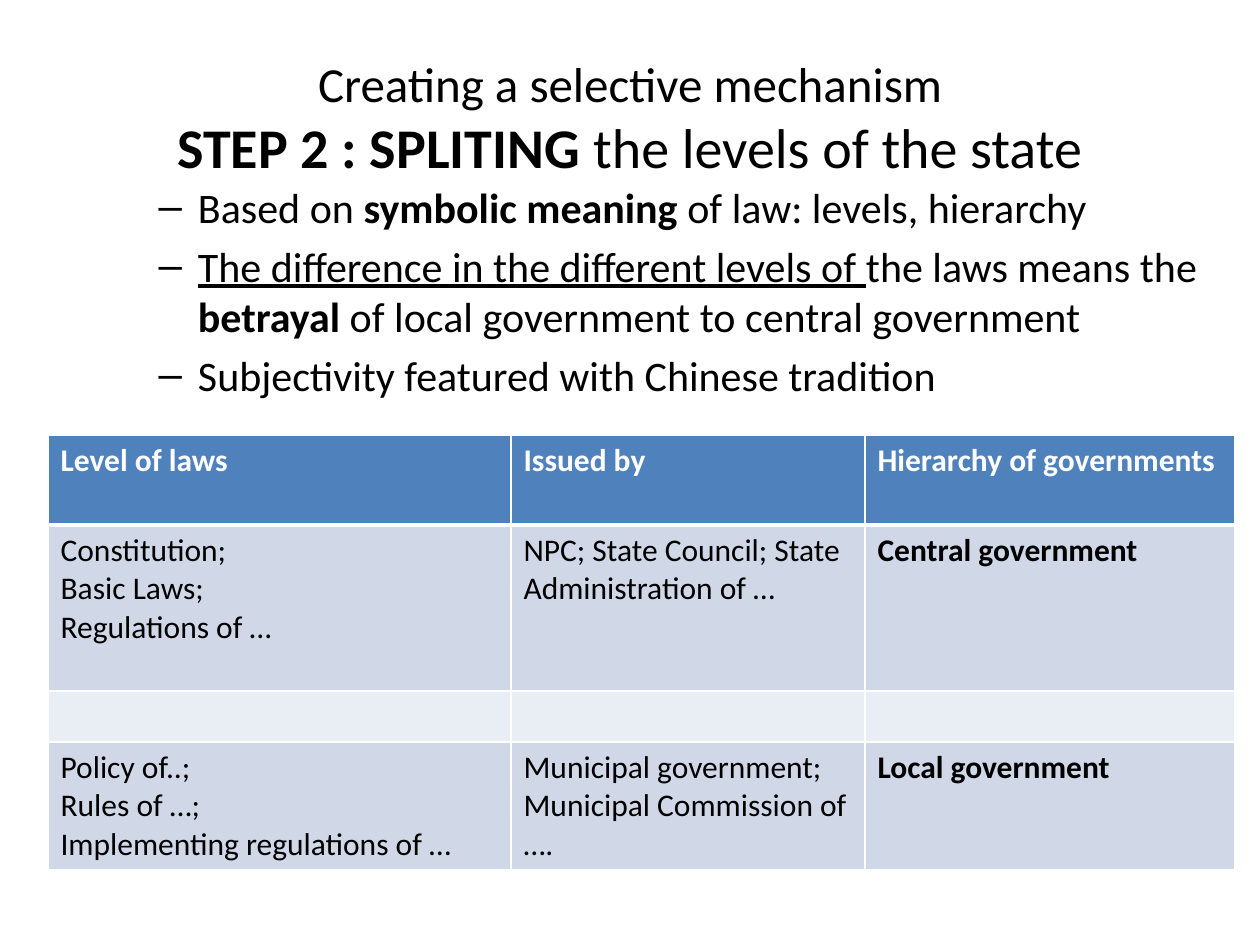
"""Build a slide on splitting the levels of the state, with a table of law levels."""
from lxml import etree
from pptx import Presentation
from pptx.dml.color import RGBColor
from pptx.enum.text import MSO_ANCHOR, PP_ALIGN
from pptx.oxml.ns import qn
from pptx.util import Pt

CENTER, MIDDLE, TOP = PP_ALIGN.CENTER, MSO_ANCHOR.MIDDLE, MSO_ANCHOR.TOP
PX = 914400 // 126
FONT = "Calibri"
BLACK = RGBColor(0x00, 0x00, 0x00)
WHITE = RGBColor(0xFF, 0xFF, 0xFF)
BLUE = RGBColor(0x4F, 0x81, 0xBD)
BAND_DARK = RGBColor(0xD0, 0xD8, 0xE8)
BAND_LIGHT = RGBColor(0xE9, 0xED, 0xF4)

TITLE = [
    [("Creating a selective mechanism", 28, False)],
    [("STEP 2 : SPLITING ", 32, True), ("the levels of the state", 32, False)],
]
BULLETS = [
    [("Based on ", ""), ("symbolic meaning ", "b"), ("of law: levels, hierarchy", "")],
    [("The difference in the different levels of ", "u"), ("the laws means the ", ""),
     ("betrayal ", "b"), ("of local government to central government", "")],
    [("Subjectivity featured with Chinese tradition", "")],
]
ROWS = [
    ["Level of laws", "Issued by", "Hierarchy of governments"],
    ["Constitution;\nBasic Laws;\nRegulations of …",
     "NPC; State Council; State Administration of …", "Central government"],
    ["", "", ""],
    ["Policy of..;\nRules of …;\nImplementing regulations of …",
     "Municipal government;\nMunicipal Commission of ….", "Local government"],
]
COL_WIDTHS = [463, 354, 370]
ROW_HEIGHTS = [90, 166, 51, 128]


def place(shape, *box):
    shape.left, shape.top, shape.width, shape.height = (v * PX for v in box)


def style(p, size, color, bold=None):
    p.font.name = FONT
    p.font.size = Pt(size)
    p.font.color.rgb = color
    p.font.bold = bold


def add_border(cell, side, points):
    ln = etree.SubElement(cell._tc.get_or_add_tcPr(), qn(f"a:ln{side}"), w=str(Pt(points)))
    fill = etree.SubElement(ln, qn("a:solidFill"))
    etree.SubElement(fill, qn("a:srgbClr"), val=str(WHITE))


def add_title(s):
    title = s.shapes.title
    place(title, 63, 38, 1134, 157)
    tf = title.text_frame
    tf.vertical_anchor = MIDDLE
    p = tf.paragraphs[0]
    p.alignment = CENTER
    for i, line in enumerate(TITLE):
        if i:
            p.add_line_break()
        for text, size, bold in line:
            r = p.add_run()
            r.text = text
            r.font.size = Pt(size)
            r.font.bold = bold
    p.font.name = FONT
    p.font.color.rgb = BLACK


def add_bullets(s):
    body = s.placeholders[1]
    place(body, 83, 175, 1134, 624)
    tf = body.text_frame
    tf.vertical_anchor = TOP
    for i, runs in enumerate(BULLETS):
        p = tf.add_paragraph() if i else tf.paragraphs[0]
        p.level = 1
        if not i:
            p.space_before = Pt(0)
        for text, mark in runs:
            r = p.add_run()
            r.text = text
            r.font.bold = mark == "b"
            r.font.underline = mark == "u"
        style(p, 24, BLACK)


def add_law_table(s):
    frame = s.shapes.add_table(len(ROWS), len(COL_WIDTHS), 48 * PX, 435 * PX,
                               sum(COL_WIDTHS) * PX, sum(ROW_HEIGHTS) * PX)
    table = frame.table
    for col, width in zip(table.columns, COL_WIDTHS):
        col.width = width * PX
    for i, (texts, height) in enumerate(zip(ROWS, ROW_HEIGHTS)):
        table.rows[i].height = height * PX
        header = i == 0
        for j, text in enumerate(texts):
            cell = table.cell(i, j)
            for side in "LRTB":
                thick = (header and side == "B") or (i == 1 and side == "T")
                add_border(cell, side, 3 if thick else 1)
            cell.fill.solid()
            cell.fill.fore_color.rgb = BLUE if header else BAND_DARK if i % 2 else BAND_LIGHT
            cell.text = text
            for p in cell.text_frame.paragraphs:
                style(p, 18, WHITE if header else BLACK, header or j == 2)


def main():
    prs = Presentation()
    prs.slide_width, prs.slide_height = 1260 * PX, 945 * PX
    s = prs.slides.add_slide(prs.slide_layouts[1])
    add_title(s)
    add_bullets(s)
    add_law_table(s)
    prs.save("out.pptx")


if __name__ == "__main__":
    main()
